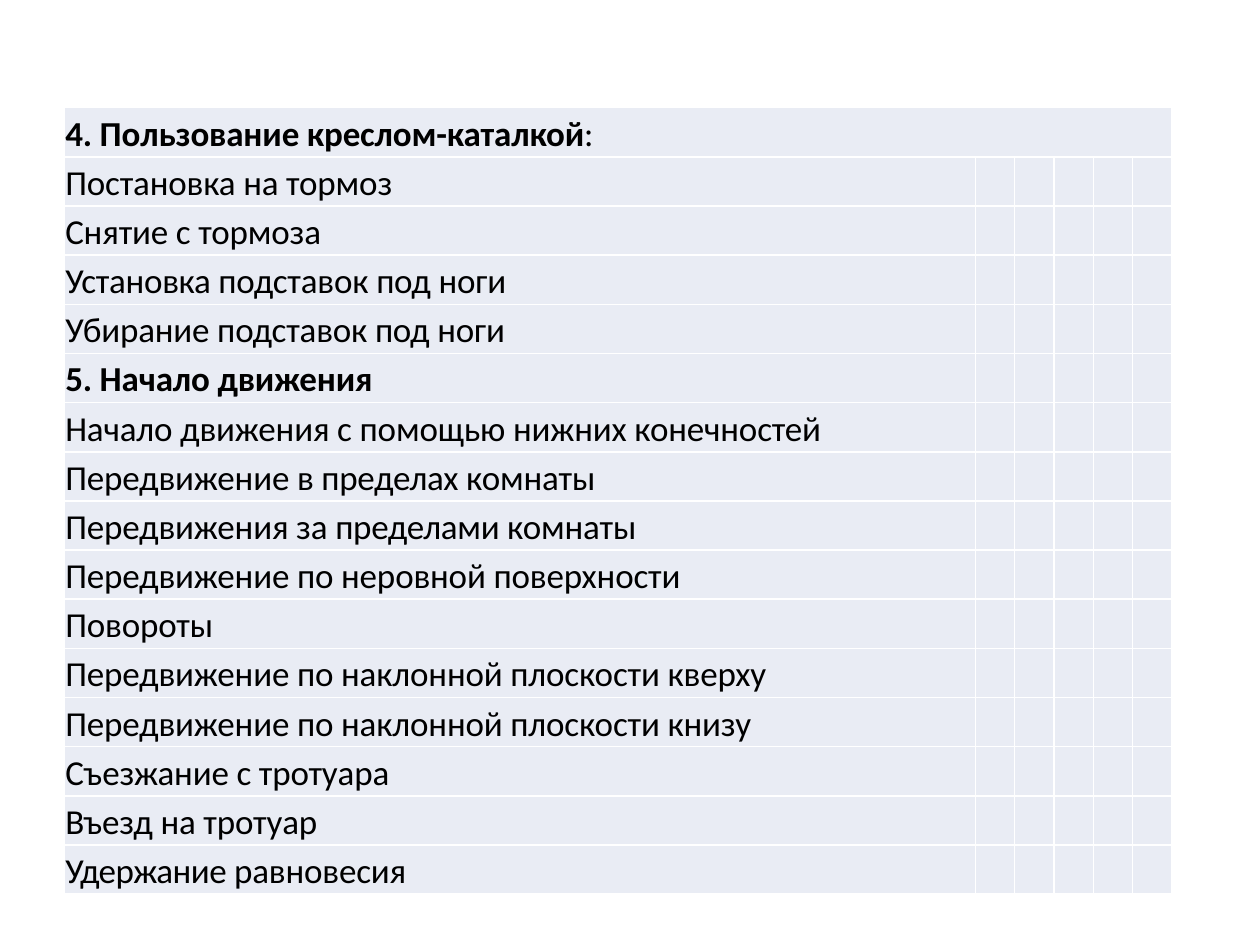
import lxml.etree
import pptx
import pptx.dml.color
import pptx.oxml.ns
import pptx.util

Pt = pptx.util.Pt
qn = pptx.oxml.ns.qn

SKILL_WIDTH, MARK_WIDTH, MARK_COUNT = 520.7, 22.5, 5
ROW_HEIGHT = 28.1
TOP_GAP = 2.9
PALE, WHITE, BLACK = "E9ECF4", "FFFFFF", "000000"
TIGHT, TIGHTER, TIGHTEST = -10, -20, -30  # hundredths of a point

# Each row is a list of runs: text, letter spacing, bold
SKILLS = [
    [("4. Пользование креслом-каталкой", TIGHT, True), (":", TIGHT, False)],
    [("Постановка на тормоз", TIGHT, False)],
    [("Снятие с тормоза", TIGHT, False)],
    [("Установка ", TIGHTER, False), ("подставок ", TIGHT, False),
     ("под ", TIGHTER, False), ("ноги", TIGHT, False)],
    [("Убирание подставок ", TIGHT, False), ("под ", TIGHTER, False),
     ("ноги", TIGHT, False)],
    [("5. Начало движения", TIGHT, True)],
    [("Начало движения с помощью нижних конечностей", TIGHT, False)],
    [("Передвижение в ", TIGHT, False), ("пределах ", TIGHTER, False),
     ("комнаты", TIGHT, False)],
    [("Передвижения за ", TIGHT, False), ("пределами ", TIGHTER, False),
     ("комнаты", TIGHT, False)],
    [("Передвижение по неровной поверхности", TIGHT, False)],
    [("Повороты", TIGHT, False)],
    [("Передвижение по наклонной плоскости кверху", TIGHT, False)],
    [("Передвижение по наклонной плоскости книзу", TIGHT, False)],
    [("Съезжание с тротуара", TIGHT, False)],
    [("Въезд ", TIGHTER, False), ("на тротуар", TIGHT, False)],
    [("Удержание ", TIGHTEST, False), ("равновесия", TIGHT, False)],
]


def color(value):
    return pptx.dml.color.RGBColor.from_string(value)


def add_borders(cell):
    """Draw thin white lines on all four sides; they must precede the fill."""
    properties = cell._tc.get_or_add_tcPr()
    for position, side in enumerate(("lnL", "lnR", "lnT", "lnB")):
        line = lxml.etree.Element(qn(f"a:{side}"), w=str(Pt(1)))
        fill = lxml.etree.SubElement(line, qn("a:solidFill"))
        lxml.etree.SubElement(fill, qn("a:srgbClr"), val=WHITE)
        properties.insert(position, line)


def format_cell(cell):
    cell.margin_left = cell.margin_right = cell.margin_bottom = 0
    cell.margin_top = Pt(TOP_GAP)
    cell.fill.solid()
    cell.fill.fore_color.rgb = color(PALE)
    add_borders(cell)


def write_skill(cell, skill):
    paragraph = cell.text_frame.paragraphs[0]
    paragraph.space_before = Pt(TOP_GAP)
    paragraph._p.get_or_add_pPr().set("marL", str(Pt(0.7)))
    for text, spacing, bold in skill:
        run = paragraph.add_run()
        run.text = text
        run.font.name = "Calibri"
        run.font.size = Pt(20)
        run.font.bold = bold
        run.font.color.rgb = color(BLACK)
        run.font._element.set("spc", str(spacing))


def add_skill_table(slide):
    checklist = slide.shapes.add_table(
        len(SKILLS), 1 + MARK_COUNT, Pt(36.6), Pt(61.5),
        Pt(SKILL_WIDTH + MARK_COUNT * MARK_WIDTH),
        Pt(len(SKILLS) * ROW_HEIGHT)).table
    checklist.first_row = checklist.horz_banding = False
    for index, column in enumerate(checklist.columns):
        column.width = Pt(MARK_WIDTH if index else SKILL_WIDTH)
    for row, skill in zip(checklist.rows, SKILLS):
        row.height = Pt(ROW_HEIGHT)
        for cell in row.cells:
            format_cell(cell)
        write_skill(row.cells[0], skill)
    checklist.cell(0, 0).merge(checklist.cell(0, MARK_COUNT))


def main():
    presentation = pptx.Presentation()
    presentation.slide_width, presentation.slide_height = Pt(720), Pt(540)
    slide = presentation.slides.add_slide(presentation.slide_layouts[6])
    add_skill_table(slide)
    presentation.save("out.pptx")


if __name__ == "__main__":
    main()
